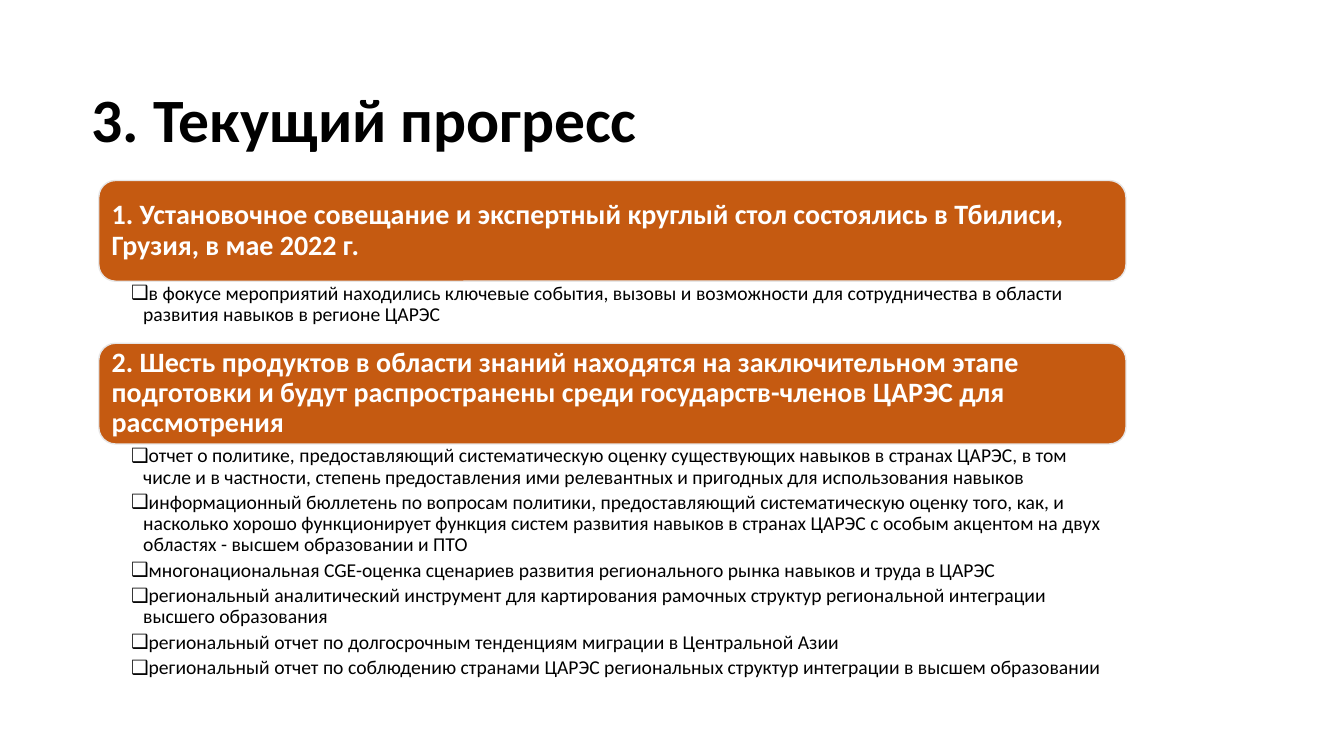
from lxml.etree import SubElement
from pptx import Presentation
from pptx.dml.color import RGBColor
from pptx.enum.shapes import MSO_SHAPE
from pptx.enum.text import MSO_ANCHOR, MSO_AUTO_SIZE, PP_ALIGN
from pptx.oxml.ns import qn
from pptx.util import Inches, Pt

BLACK = RGBColor(0x00, 0x00, 0x00)
WHITE = RGBColor(0xFF, 0xFF, 0xFF)
RUST = RGBColor(0xC5, 0x5A, 0x11)
PALE = RGBColor(0xE7, 0xE6, 0xE6)

# Shares of the slide's size, in percent
LEFT, WIDTH = 7.35, 76.43
TOP, BAND = 23.87, 13.33

# Heading, height of its list, list items
PARTS = [
    ("1. Установочное совещание и экспертный круглый стол состоялись в Тбилиси, "
     "Грузия, в мае 2022 г.", 8.2, [
         "в фокусе мероприятий находились ключевые события, вызовы и возможности "
         "для сотрудничества в области развития навыков в регионе ЦАРЭС",
     ]),
    ("2. Шесть продуктов в области знаний находятся на заключительном этапе "
     "подготовки и будут распространены среди государств-членов ЦАРЭС для "
     "рассмотрения", 32.27, [
         "отчет о политике, предоставляющий систематическую оценку существующих "
         "навыков в странах ЦАРЭС, в том числе и в частности, степень "
         "предоставления ими релевантных и пригодных для использования навыков",
         "информационный бюллетень по вопросам политики, предоставляющий "
         "систематическую оценку того, как, и насколько хорошо функционирует "
         "функция систем развития навыков в странах ЦАРЭС с особым акцентом на "
         "двух областях - высшем образовании и ПТО",
         "многонациональная CGE-оценка сценариев развития регионального рынка "
         "навыков и труда в ЦАРЭС",
         "региональный аналитический инструмент для картирования рамочных "
         "структур региональной интеграции высшего образования",
         "региональный отчет по долгосрочным тенденциям миграции в Центральной Азии",
         "региональный отчет по соблюдению странами ЦАРЭС региональных структур "
         "интеграции в высшем образовании",
     ]),
]


class Deck:
    face = "Calibri"

    def __init__(self):
        self.show = Presentation()
        self.show.slide_width = Inches(13.33)
        self.show.slide_height = Inches(7.5)
        self.slide = self.show.slides.add_slide(
            self.show.slide_layouts.get_by_name("Two Content"))

    def box(self, x, y, w, h):
        """Turn percent shares of the slide into lengths."""
        wide, high = self.show.slide_width / 100, self.show.slide_height / 100
        return [round(n) for n in (x * wide, y * high, w * wide, h * high)]

    def place(self, shape, *share):
        shape.left, shape.top, shape.width, shape.height = self.box(*share)

    def frame(self, shape, anchor, pads):
        """Set wrapping, anchor and insets (left, top, right, bottom)."""
        text = shape.text_frame
        text.word_wrap = True
        text.auto_size = MSO_AUTO_SIZE.NONE
        text.vertical_anchor = anchor
        (text.margin_left, text.margin_top,
         text.margin_right, text.margin_bottom) = map(Inches, pads)
        return text

    def say(self, para, words, size, color, bold=False, after=0):
        """Add one styled run and set the paragraph's spacing."""
        para.alignment = PP_ALIGN.LEFT
        para.line_spacing = 0.9
        para.space_before = Pt(0)
        para.space_after = Pt(after)
        run = para.add_run()
        run.text = words
        font = run.font
        font.name, font.size, font.bold = self.face, Pt(size), bold
        font.color.rgb = color

    def title(self, words, *share):
        shape = self.slide.shapes.title
        self.place(shape, *share)
        text = self.frame(shape, MSO_ANCHOR.MIDDLE, (0.1, 0.05, 0.1, 0.05))
        self.say(text.paragraphs[0], words, 44, BLACK, bold=True)

    def band(self, words, *share):
        shape = self.slide.shapes.add_shape(
            MSO_SHAPE.ROUNDED_RECTANGLE, *self.box(*share))
        shape.shadow.inherit = False
        shape.fill.solid()
        shape.fill.fore_color.rgb = RUST
        shape.line.color.rgb = PALE
        shape.line.width = Pt(1)
        text = self.frame(shape, MSO_ANCHOR.MIDDLE, [0.08] * 4)
        self.say(text.paragraphs[0], words, 20, WHITE, bold=True)

    def bullets(self, shape, items, *share):
        self.place(shape, *share)
        text = self.frame(shape, MSO_ANCHOR.TOP, (0.32, 0.02, 0.11, 0.02))
        for i, item in enumerate(items):
            para = text.add_paragraph() if i else text.paragraphs[0]
            props = para._p.get_or_add_pPr()
            props.set("marL", str(Inches(0.12)))
            props.set("indent", str(-Inches(0.12)))
            SubElement(props, qn("a:buChar"), char="❑")
            self.say(para, item, 14, BLACK, after=3)


def main():
    deck = Deck()
    deck.title("3. Текущий прогресс", 6.08, 6.53, 64.65, 19.33)
    slots = [p for p in deck.slide.placeholders if p.placeholder_format.idx in (1, 2)]
    top = TOP
    for slot, (head, tall, items) in zip(slots, PARTS):
        deck.band(head, LEFT, top, WIDTH, BAND)
        deck.bullets(slot, items, LEFT, top + BAND, WIDTH, tall)
        top += BAND + tall
    deck.show.save("out.pptx")


if __name__ == "__main__":
    main()
